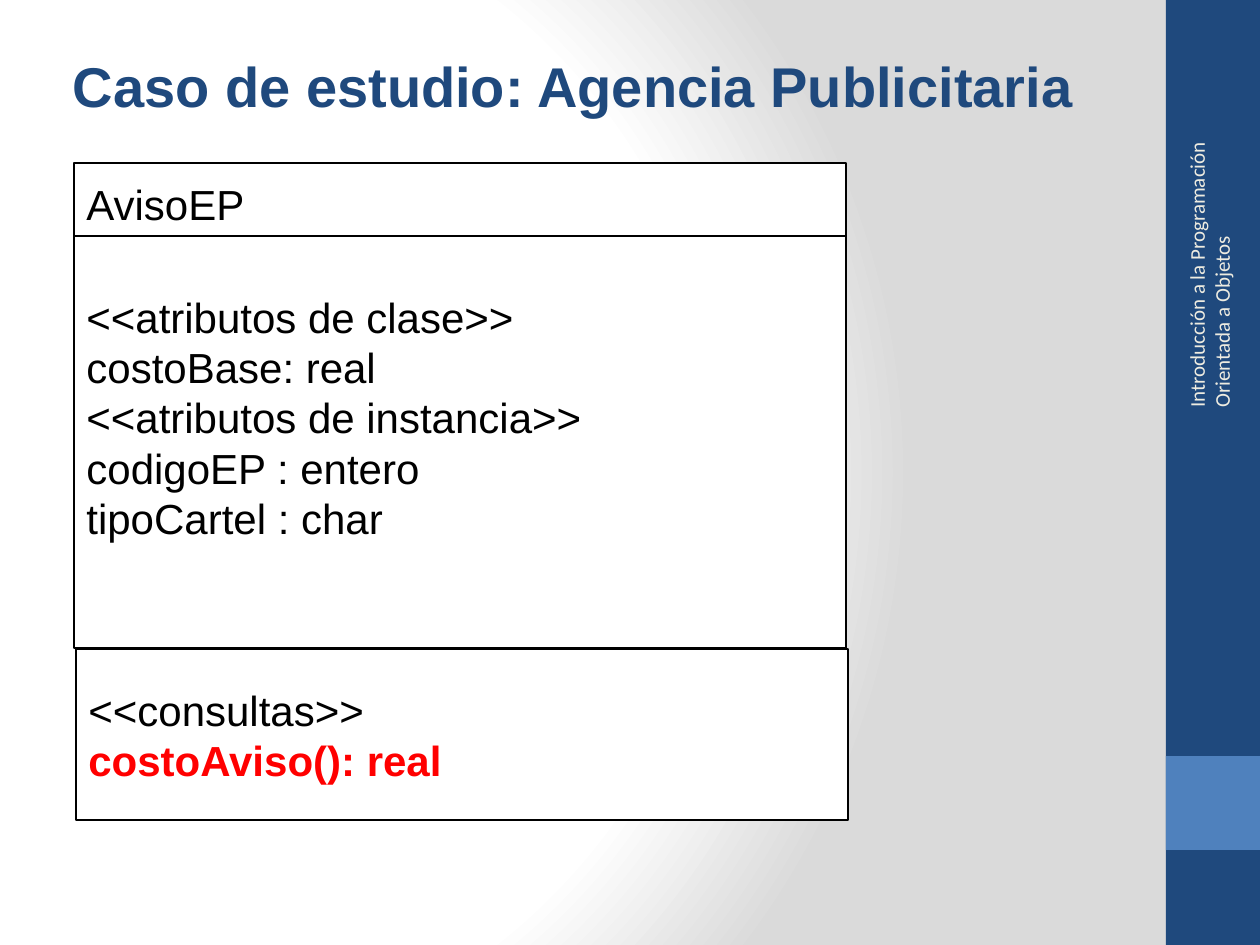
from pptx import Presentation
from pptx.dml.color import RGBColor
from pptx.enum.shapes import MSO_SHAPE
from pptx.enum.text import MSO_ANCHOR, PP_ALIGN
from pptx.oxml import parse_xml
from pptx.oxml.ns import nsdecls
from pptx.util import Pt

EMU_PER_PX = 914400 / 126
NAVY, BLUE, CREAM = "1F497D", "4F81BD", "EEECE1"
WHITE, GREY, BLACK, RED = "FFFFFF", "DADADA", "000000", "FF0000"


def px(length):
    return round(length * EMU_PER_PX)


def color(value):
    return RGBColor.from_string(value)


def add_background(slide):
    stops = "".join(
        f'<a:gs pos="{percent * 1000}"><a:srgbClr val="{tone}"/></a:gs>'
        for percent, tone in ((0, WHITE), (75, WHITE), (100, GREY))
    )
    background = parse_xml(
        f'<p:bg {nsdecls("p", "a")}><p:bgPr><a:gradFill rotWithShape="1">'
        f'<a:gsLst>{stops}</a:gsLst><a:path path="circle">'
        '<a:fillToRect l="20000" t="50000" r="100000" b="50000"/></a:path>'
        '</a:gradFill><a:effectLst/></p:bgPr></p:bg>'
    )
    slide.element.cSld.insert(0, background)


def add_box(slide, bounds, fill, outline=None):
    box = slide.shapes.add_shape(MSO_SHAPE.RECTANGLE, *map(px, bounds))
    box.shadow.inherit = False
    box.fill.solid()
    box.fill.fore_color.rgb = color(fill)
    if outline:
        box.line.color.rgb = color(outline)
        box.line.width = Pt(0.75)
    else:
        box.line.fill.background()
    return box


def write_lines(shape, lines, size, font="Arial", align=PP_ALIGN.LEFT):
    frame = shape.text_frame
    frame.word_wrap = True
    frame.vertical_anchor = MSO_ANCHOR.MIDDLE
    for index, (text, tone, bold) in enumerate(lines):
        paragraph = frame.paragraphs[0] if index == 0 else frame.add_paragraph()
        paragraph.alignment = align
        run = paragraph.add_run()
        run.text = text
        run.font.name = font
        run.font.size = Pt(size)
        run.font.bold = bold
        run.font.color.rgb = color(tone)
    return frame


def add_label(slide, bounds, line, size, font="Arial", align=PP_ALIGN.LEFT):
    label = slide.shapes.add_textbox(*map(px, bounds))
    write_lines(label, [line], size, font, align)
    return label


def add_compartment(slide, bounds, lines):
    return write_lines(add_box(slide, bounds, WHITE, BLACK), lines, 24)


def main():
    presentation = Presentation()
    presentation.slide_width, presentation.slide_height = px(1260), px(945)
    slide = presentation.slides.add_slide(presentation.slide_layouts[6])
    add_background(slide)

    add_box(slide, (1166, 0, 94, 945), NAVY)
    add_box(slide, (1166, 756, 94, 94), BLUE)
    course = add_label(
        slide, (1041, 227, 336, 50),
        ("Introducción a la Programación Orientada a Objetos", CREAM, False),
        12, "Calibri",
    )
    course.rotation = 270

    add_compartment(slide, (74, 163, 772, 82), [("AvisoEP", BLACK, False)])
    attributes = add_compartment(slide, (74, 236, 772, 412), [
        (text, BLACK, False) for text in (
            "<<atributos de clase>>",
            "costoBase: real",
            "<<atributos de instancia>>",
            "codigoEP : entero",
            "tipoCartel : char",
        )
    ])
    attributes.margin_bottom = px(56)
    add_compartment(slide, (76, 649, 772, 171), [
        ("<<consultas>>", BLACK, False),
        ("costoAviso(): real", RED, True),
    ])

    title = add_label(
        slide, (-25, 62, 1197, 83),
        ("Caso de estudio: Agencia Publicitaria", NAVY, True),
        32, align=PP_ALIGN.CENTER,
    )
    title.text_frame.paragraphs[0].add_line_break()
    presentation.save("out.pptx")


if __name__ == "__main__":
    main()
